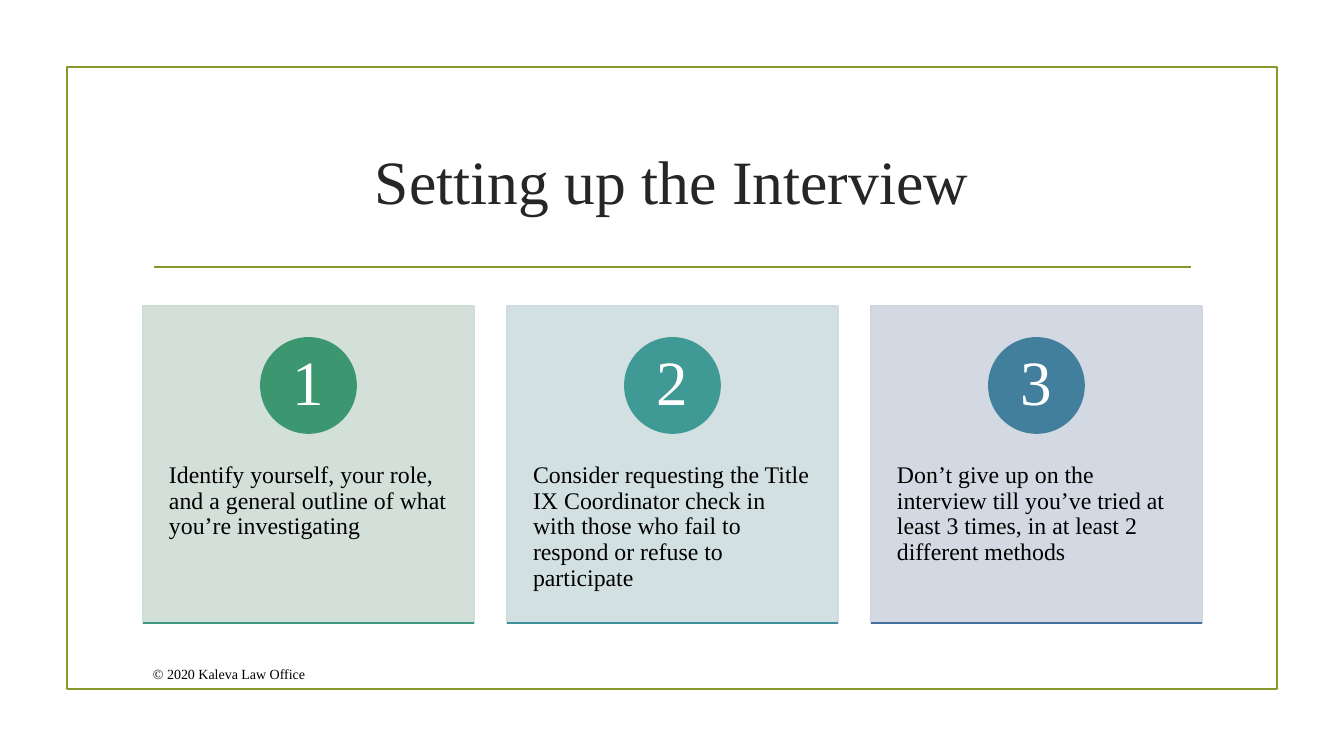
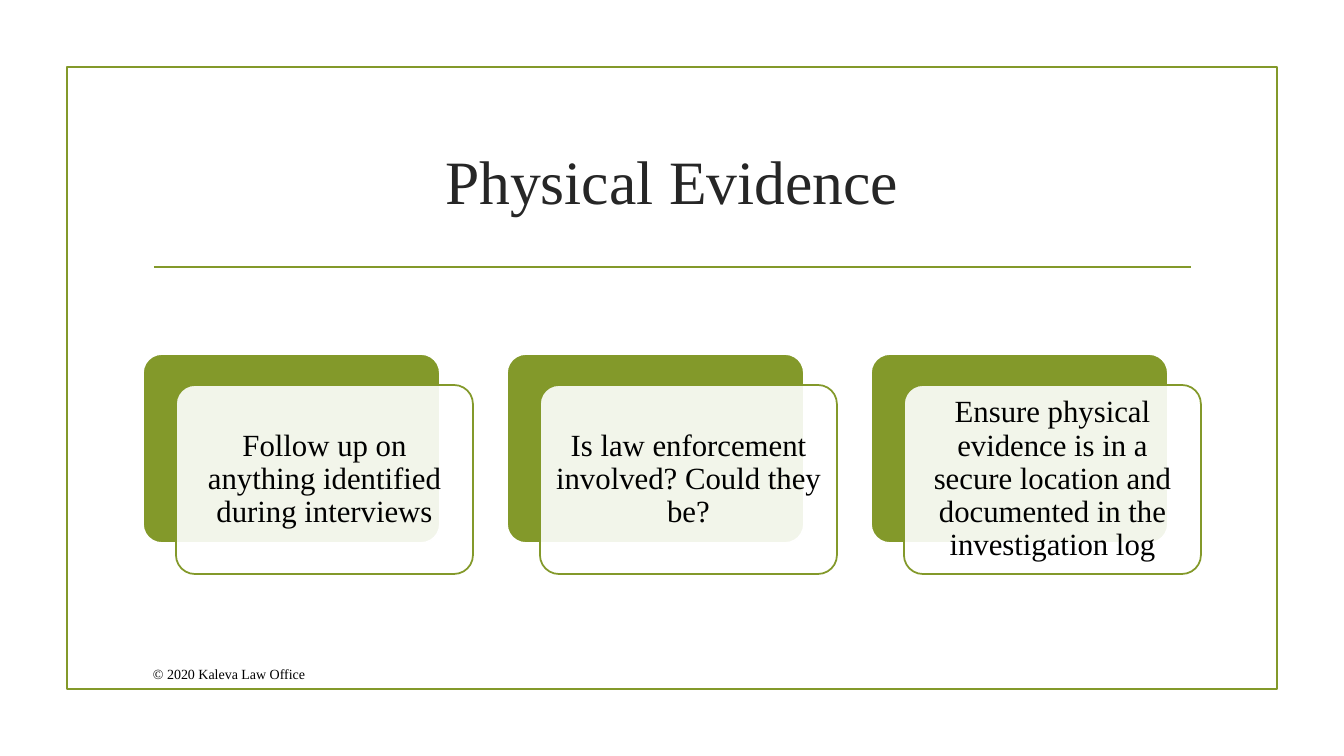
from dataclasses import dataclass
from typing import Any

from lxml.etree import SubElement
from pptx import Presentation
from pptx.dml.color import RGBColor
from pptx.enum.shapes import MSO_CONNECTOR, MSO_SHAPE
from pptx.enum.text import MSO_ANCHOR, MSO_AUTO_SIZE, PP_ALIGN
from pptx.oxml.ns import qn
from pptx.util import Emu, Pt

PIXELS_PER_INCH = 100.8
FONT = "Times New Roman"
LINE_WIDTH = Pt(1.25)
COLUMN_LEFT, COLUMN_STEP = 143, 364
COLORS = {
    "olive": "83992A",
    "title": "262626",
    "black": "000000",
    "white": "FFFFFF",
}


@dataclass(frozen=True)
class Box:
    left: int
    top: int
    width: int
    height: int


@dataclass(frozen=True)
class TextStyle:
    size: int
    color: str = COLORS["black"]
    align: PP_ALIGN = PP_ALIGN.CENTER
    anchor: MSO_ANCHOR = MSO_ANCHOR.MIDDLE
    insets: tuple[int, int, int, int] = (10, 5, 10, 5)
    line_spacing: float = 0.9


@dataclass(frozen=True)
class Step:
    text: str
    card: str
    circle: str
    edge: str


TITLE_STYLE = TextStyle(44, COLORS["title"], line_spacing=1.0)
FOOTER_STYLE = TextStyle(10, align=PP_ALIGN.LEFT, line_spacing=1.0)
STEP_STYLE = TextStyle(17, align=PP_ALIGN.LEFT, anchor=MSO_ANCHOR.TOP, insets=(26, 157, 26, 36))
NUMBER_STYLE = TextStyle(45, COLORS["white"], insets=(0, 1, 0, 1))
EVIDENCE_STYLE = TextStyle(22, insets=(9, 9, 9, 9))

STEPS = [
    Step("Identify yourself, your role, and a general outline of what you’re investigating",
         "CEDDD5", "3C9770", "3E9882"),
    Step("Consider requesting the Title IX Coordinator check in with those who fail to "
         "respond or refuse to participate",
         "CFDDDE", "3F9995", "418F9B"),
    Step("Don’t give up on the interview till you’ve tried at least 3 times, in at least 2 "
         "different methods",
         "CFD5DF", "427F9C", "44709D"),
]
EVIDENCE = [
    "Follow up on anything identified during interviews",
    "Is law enforcement involved? Could they be?",
    "Ensure physical evidence is in a secure location and documented in the investigation log",
]


def px(length: int) -> Emu:
    return Emu(round(length * 914400 / PIXELS_PER_INCH))


def emu_box(box: Box) -> tuple[Emu, Emu, Emu, Emu]:
    return px(box.left), px(box.top), px(box.width), px(box.height)


def set_attributes(target: Any, values: dict[str, Any]) -> None:
    for name, value in values.items():
        setattr(target, name, value)


def write_text(shape: Any, text: str, style: TextStyle) -> None:
    left, top, right, bottom = map(px, style.insets)
    frame = shape.text_frame
    frame.text = text
    set_attributes(frame, {
        "word_wrap": True,
        "auto_size": MSO_AUTO_SIZE.NONE,
        "vertical_anchor": style.anchor,
        "margin_left": left,
        "margin_top": top,
        "margin_right": right,
        "margin_bottom": bottom,
    })
    paragraph = frame.paragraphs[0]
    set_attributes(paragraph, {
        "alignment": style.align,
        "line_spacing": style.line_spacing,
        "space_before": Pt(0),
    })
    font = paragraph.runs[0].font
    set_attributes(font, {"name": FONT, "size": Pt(style.size)})
    font.color.rgb = RGBColor.from_string(style.color)


def set_line(shape: Any, color: str) -> None:
    shape.line.color.rgb = RGBColor.from_string(color)
    shape.line.width = LINE_WIDTH


def set_opacity(shape: Any, percent: int) -> None:
    properties = shape.element.spPr
    fill_color = properties.find(qn("a:solidFill")).find(qn("a:srgbClr"))
    SubElement(fill_color, qn("a:alpha"), val=str(percent * 1000))


def add_box(slide: Any, kind: MSO_SHAPE, box: Box, line: str, fill: str | None = None) -> Any:
    shape = slide.shapes.add_shape(kind, *emu_box(box))
    shape.shadow.inherit = False
    if fill is None:
        shape.fill.background()
    else:
        shape.fill.solid()
        shape.fill.fore_color.rgb = RGBColor.from_string(fill)
    set_line(shape, line)
    if kind == MSO_SHAPE.ROUNDED_RECTANGLE:
        shape.adjustments[0] = 0.1
    return shape


def add_rule(slide: Any, left: int, right: int, top: int, color: str) -> None:
    rule = slide.shapes.add_connector(
        MSO_CONNECTOR.STRAIGHT, px(left), px(top), px(right), px(top))
    set_line(rule, color)
    SubElement(rule.element.spPr, qn("a:effectLst"))


def add_base_slide(presentation: Any, title: str) -> Any:
    slide = presentation.slides.add_slide(presentation.slide_layouts.get_by_name("Title Only"))
    add_box(slide, MSO_SHAPE.RECTANGLE, Box(67, 67, 1210, 622), COLORS["olive"])
    add_rule(slide, 154, 1191, 267, COLORS["olive"])
    heading = slide.shapes.title
    left, top, width, height = emu_box(Box(COLUMN_LEFT, 108, 1058, 144))
    set_attributes(heading, {"left": left, "top": top, "width": width, "height": height})
    write_text(heading, title, TITLE_STYLE)
    footer = slide.shapes.add_textbox(*emu_box(Box(COLUMN_LEFT, 658, 805, 31)))
    write_text(footer, "© 2020 Kaleva Law Office", FOOTER_STYLE)
    return slide


def add_step(slide: Any, index: int, step: Step) -> None:
    left = COLUMN_LEFT + index * COLUMN_STEP
    box = Box(left, 306, 331, 317)
    card = add_box(slide, MSO_SHAPE.RECTANGLE, box, step.card, step.card)
    set_opacity(card, 90)
    write_text(card, step.text, STEP_STYLE)
    circle = add_box(slide, MSO_SHAPE.OVAL, Box(left + 118, 338, 95, 95), step.circle, step.circle)
    write_text(circle, str(index + 1), NUMBER_STYLE)
    add_rule(slide, left, left + box.width, box.top + box.height, step.edge)


def add_evidence(slide: Any, index: int, text: str) -> None:
    left = COLUMN_LEFT + index * COLUMN_STEP
    add_box(slide, MSO_SHAPE.ROUNDED_RECTANGLE, Box(left, 354, 297, 189),
            COLORS["white"], COLORS["olive"])
    card = add_box(slide, MSO_SHAPE.ROUNDED_RECTANGLE, Box(left + 33, 385, 297, 189),
                   COLORS["olive"], COLORS["white"])
    set_opacity(card, 90)
    write_text(card, text, EVIDENCE_STYLE)


def main() -> None:
    presentation = Presentation()
    set_attributes(presentation, {"slide_width": px(1344), "slide_height": px(756)})

    interview_slide = add_base_slide(presentation, "Setting up the Interview")
    for index, step in enumerate(STEPS):
        add_step(interview_slide, index, step)

    evidence_slide = add_base_slide(presentation, "Physical Evidence")
    for index, text in enumerate(EVIDENCE):
        add_evidence(evidence_slide, index, text)

    presentation.save("out.pptx")


if __name__ == "__main__":
    main()
